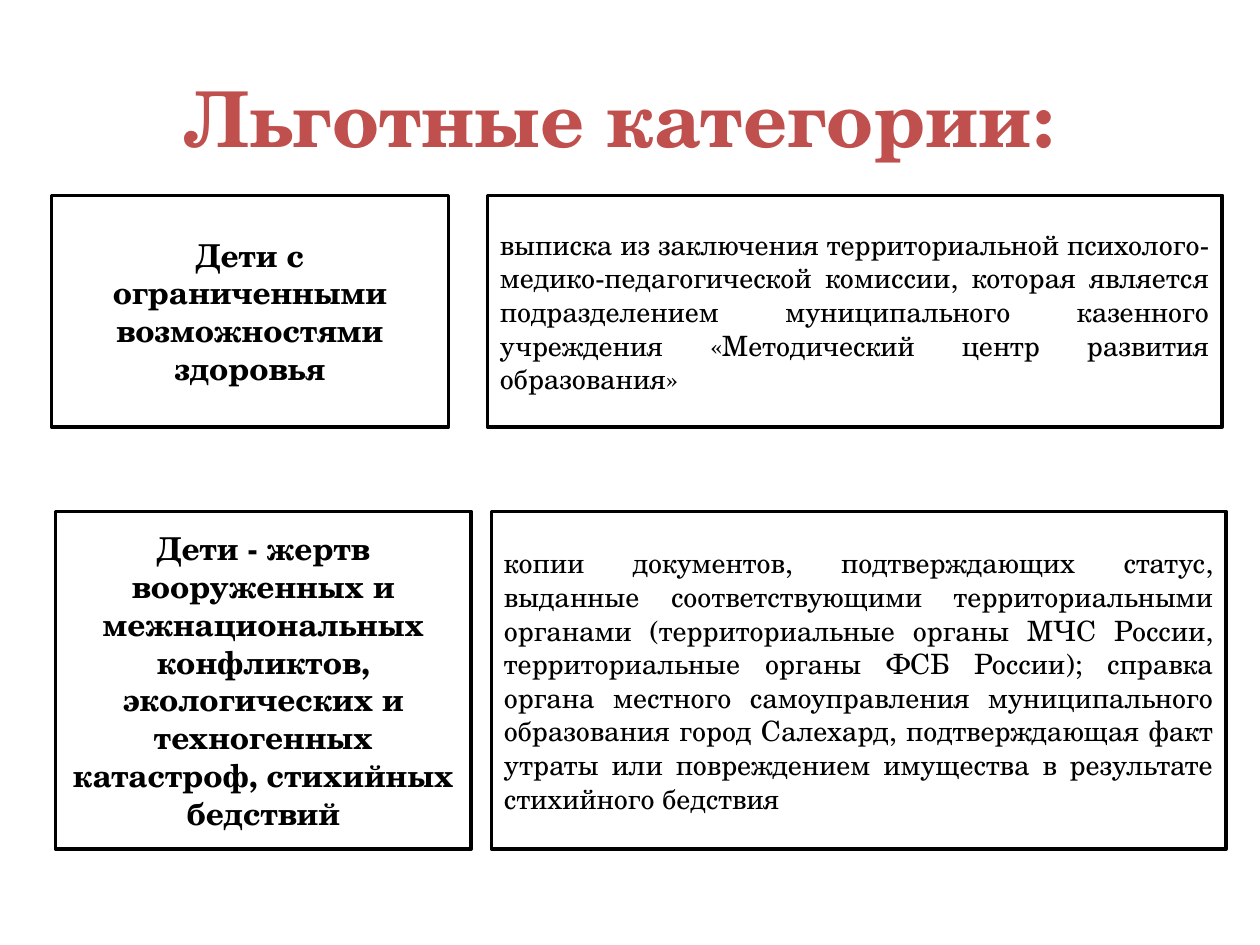
from dataclasses import dataclass

from pptx import Presentation
from pptx.dml.color import RGBColor
from pptx.enum.shapes import MSO_SHAPE
from pptx.enum.text import MSO_ANCHOR, PP_ALIGN
from pptx.util import Cm, Pt


@dataclass(frozen=True)
class Theme:
    face: str = "TeX Gyre Schola"
    ink: RGBColor = RGBColor(0, 0, 0)
    paper: RGBColor = RGBColor(255, 255, 255)
    red: RGBColor = RGBColor(0xC0, 0x50, 0x4D)
    title: int = 44
    group: int = 18
    proof: int = 16
    line: int = 2


class Deck:
    def __init__(self, theme, slide):
        self.theme = theme
        self.slide = slide

    def label(self, shape, text, size, color, bold, align):
        frame = shape.text_frame
        frame.word_wrap = True
        frame.vertical_anchor = MSO_ANCHOR.MIDDLE
        par = frame.paragraphs[0]
        par.alignment = align
        run = par.add_run()
        run.text = text
        look = {"name": self.theme.face, "size": Pt(size), "bold": bold}
        for key, value in look.items():
            setattr(run.font, key, value)
        run.font.color.rgb = color

    def title(self, text, *place):
        box = self.slide.shapes.add_textbox(*map(Cm, place))
        self.label(box, text, self.theme.title, self.theme.red, True,
                   PP_ALIGN.CENTER)

    def box(self, text, place, size, bold, align):
        theme = self.theme
        box = self.slide.shapes.add_shape(MSO_SHAPE.RECTANGLE, *map(Cm, place))
        box.shadow.inherit = False
        box.fill.solid()
        box.fill.fore_color.rgb = theme.paper
        box.line.color.rgb = theme.ink
        box.line.width = Pt(theme.line)
        self.label(box, text, size, theme.ink, bold, align)

    def row(self, group, proof, left, top, width, height):
        """Draw a category box and, to its right, the proof it needs."""
        shift, wide = 8.79, 14.81
        self.box(group, (left, top, width, height),
                 self.theme.group, True, PP_ALIGN.CENTER)
        self.box(proof, (left + shift, top, wide, height),
                 self.theme.proof, False, PP_ALIGN.JUSTIFY)


ROWS = [
    ("Дети с ограниченными возможностями здоровья",
     "выписка из заключения территориальной психолого-медико-педагогической "
     "комиссии, которая является подразделением муниципального казенного "
     "учреждения «Методический центр развития образования»",
     1.04, 3.94, 8, 4.67),
    ("Дети - жертв вооруженных и межнациональных конфликтов, экологических "
     "и техногенных катастроф, стихийных бедствий",
     "копии документов, подтверждающих статус, выданные соответствующими "
     "территориальными органами (территориальные органы МЧС России, "
     "территориальные органы ФСБ России); справка органа местного "
     "самоуправления муниципального образования город Салехард, "
     "подтверждающая факт утраты или повреждением имущества в результате "
     "стихийного бедствия",
     1.12, 10.31, 8.38, 6.81),
]


def main():
    show = Presentation()
    show.slide_width, show.slide_height = Cm(25.4), Cm(19.05)
    deck = Deck(Theme(), show.slides.add_slide(show.slide_layouts[6]))
    deck.title("Льготные категории: ", 1.27, 0.76, 22.86, 3.18)
    for row in ROWS:
        deck.row(*row)
    show.save("out.pptx")


if __name__ == "__main__":
    main()
